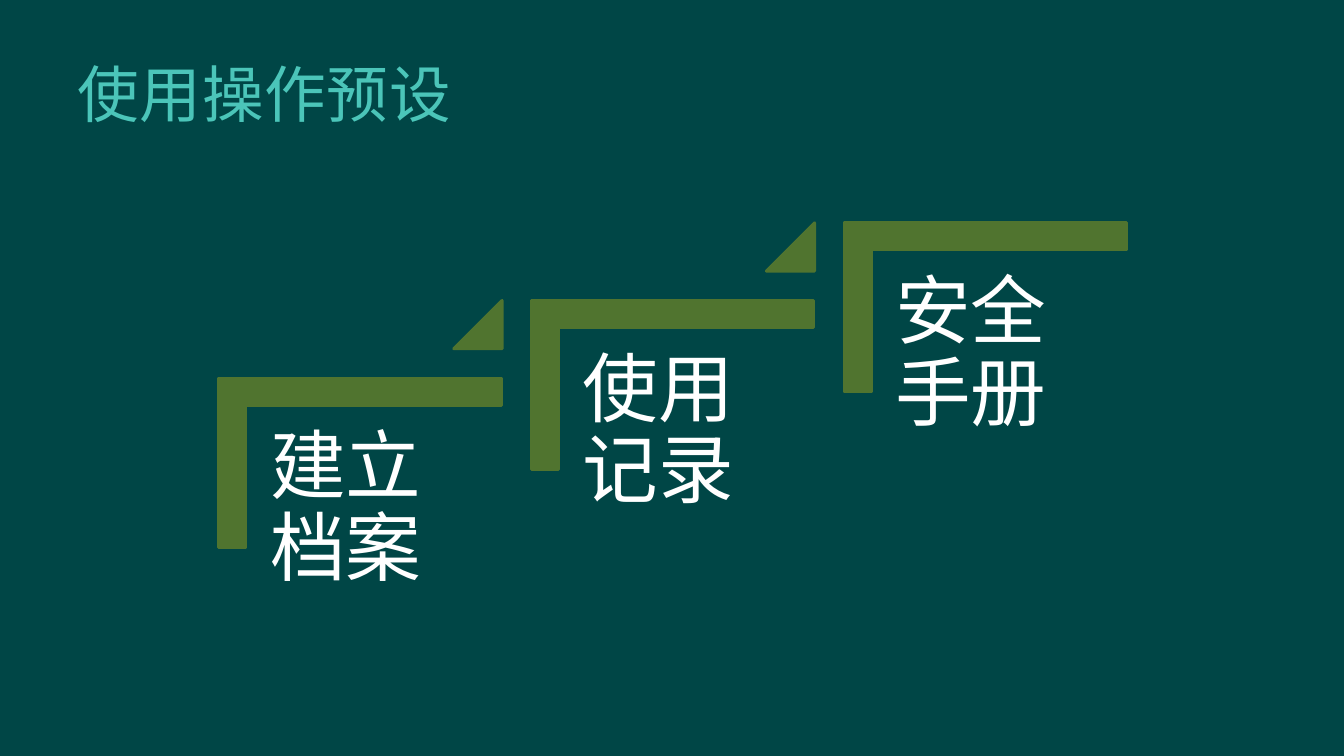
import pptx
import pptx.util
import pptx.dml.color
import pptx.enum.shapes
import pptx.enum.text

TITLE = "使用操作预设"
STEPS = ["建立档案", "使用记录", "安全手册"]

BACKGROUND, TITLE_COLOR, STEP_COLOR, TEXT_COLOR = "004646", "4BC5B9", "50742F", "FFFFFF"
TITLE_BOX = (0.67, 0.3, 11.34, 1.25)

# Staircase: each step moves right and up by the same amount
FIRST_LEFT, FIRST_TOP = 2.45, 4.02
STEP_RIGHT, STEP_UP = 3.1, 0.77
TEXT_WIDTH, TEXT_HEIGHT, TEXT_INSET = 2.53, 2.22, 0.23
CORNER_OFFSET, CORNER_SIZE = (0.28, -0.83), (1.68, 2.8)
TRIANGLE_OFFSET, TRIANGLE_SIZE = (2.05, -1.04), (0.48, 0.48)

Inches, Pt = pptx.util.Inches, pptx.util.Pt
SHAPE = pptx.enum.shapes.MSO_SHAPE
ANCHOR = pptx.enum.text.MSO_ANCHOR
ALIGN = pptx.enum.text.PP_ALIGN


def color(hex_string):
    return pptx.dml.color.RGBColor.from_string(hex_string)


def apply(target, **values):
    for name, value in values.items():
        setattr(target, name, value)


def write(paragraph, text, font_name, size, hex_string):
    run = paragraph.add_run()
    run.text = text
    apply(run.font, name=font_name, size=Pt(size), bold=False)
    run.font.color.rgb = color(hex_string)
    return run


def add_step_shape(slide, preset, box, adjustments, rotation=0):
    shape = slide.shapes.add_shape(preset, *map(Inches, box))
    for index, value in enumerate(adjustments):
        shape.adjustments[index] = value
    shape.rotation = rotation
    shape.shadow.inherit = False
    shape.fill.solid()
    shape.fill.fore_color.rgb = color(STEP_COLOR)
    shape.line.color.rgb = color(STEP_COLOR)
    shape.line.width = Pt(2)


def add_step_text(slide, text, left, top):
    box = slide.shapes.add_textbox(*map(Inches, (left, top, TEXT_WIDTH, TEXT_HEIGHT)))
    inset = Inches(TEXT_INSET)
    apply(box.text_frame, word_wrap=True, vertical_anchor=ANCHOR.TOP,
          margin_left=inset, margin_right=inset, margin_top=inset, margin_bottom=inset)
    paragraph = box.text_frame.paragraphs[0]
    apply(paragraph, line_spacing=0.9, alignment=ALIGN.LEFT)
    write(paragraph, text, "Times New Roman", 54, TEXT_COLOR)


def main():
    presentation = pptx.Presentation()
    apply(presentation, slide_width=Inches(13.33), slide_height=Inches(7.5))
    slide = presentation.slides.add_slide(presentation.slide_layouts[5])
    slide.background.fill.solid()
    slide.background.fill.fore_color.rgb = color(BACKGROUND)

    # Title
    title = slide.shapes.title
    apply(title, **dict(zip(("left", "top", "width", "height"), map(Inches, TITLE_BOX))))
    apply(title.text_frame, vertical_anchor=ANCHOR.MIDDLE, word_wrap=True)
    paragraph = title.text_frame.paragraphs[0]
    paragraph.alignment = ALIGN.LEFT
    run = write(paragraph, TITLE, "Lato", 44, TITLE_COLOR)
    run.font._element.set("spc", "50")

    # Steps, with a triangle leading up to the next one
    for index, text in enumerate(STEPS):
        left = FIRST_LEFT + index * STEP_RIGHT
        top = FIRST_TOP - index * STEP_UP
        corner = (left + CORNER_OFFSET[0], top + CORNER_OFFSET[1], *CORNER_SIZE)
        add_step_shape(slide, SHAPE.CORNER, corner, (0.161, 0.161), 90)
        add_step_text(slide, text, left, top)
        if index < len(STEPS) - 1:
            triangle = (left + TRIANGLE_OFFSET[0], top + TRIANGLE_OFFSET[1], *TRIANGLE_SIZE)
            add_step_shape(slide, SHAPE.ISOSCELES_TRIANGLE, triangle, (1,))

    presentation.save("out.pptx")


if __name__ == "__main__":
    main()
